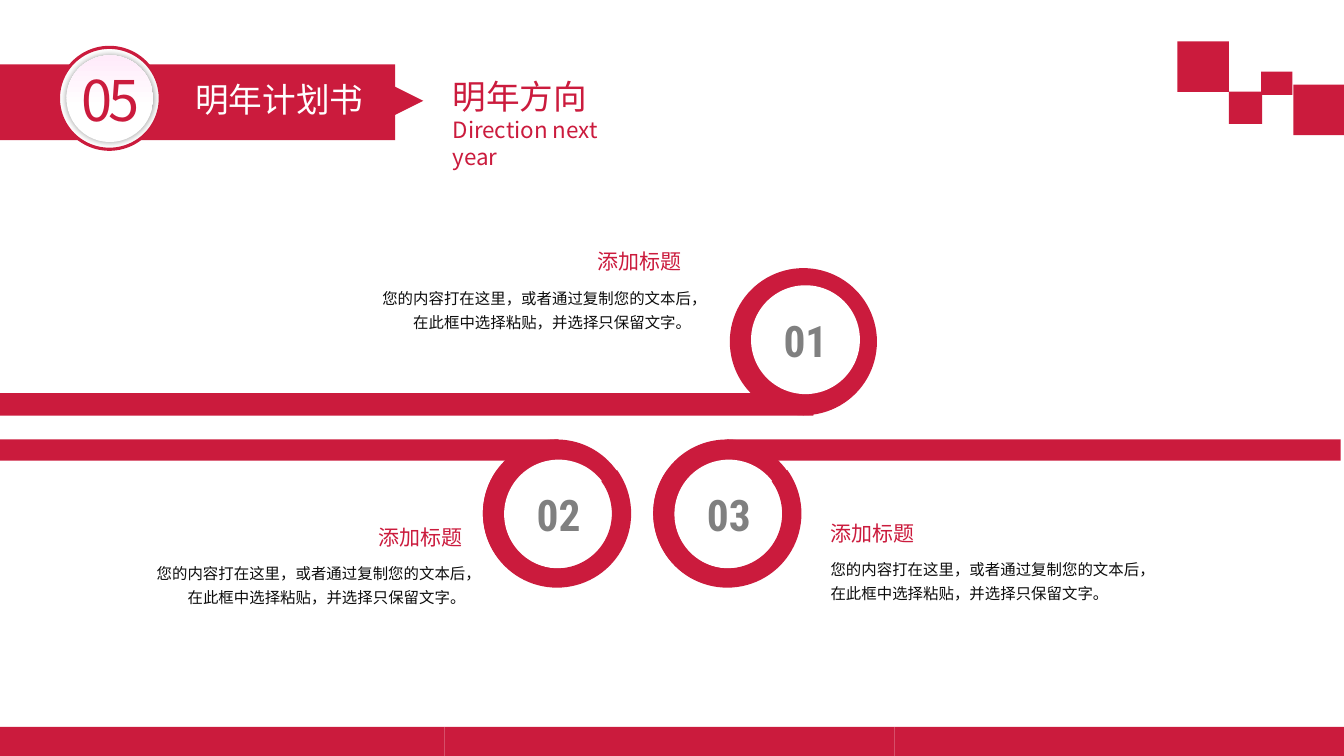
"""Build the slide on next year's direction with three numbered rings."""
from dataclasses import dataclass

from lxml import etree
from pptx import Presentation
from pptx import util as u
from pptx.dml.color import RGBColor
from pptx.enum import shapes, text
from pptx.oxml.ns import qn

SLIDE_WIDTH, SLIDE_HEIGHT = u.Inches(13.33), u.Inches(7.5)
ROWS_PER_COLUMN = 16 / 9
RED, WHITE, GREY, BLACK, PINK = "CB1B3D", "FFFFFF", "808080", "0D0D0D", "FFEBFA"
SANS, CONDENSED = "Noto Sans CJK SC", "Roboto Condensed"
LEFT, CENTER, RIGHT = text.PP_ALIGN.LEFT, text.PP_ALIGN.CENTER, text.PP_ALIGN.RIGHT
RECTANGLE, OVAL = shapes.MSO_SHAPE.RECTANGLE, shapes.MSO_SHAPE.OVAL
HEADING = "添加标题"
BODY = "您的内容打在这里，或者通过复制您的文本后，在此框中选择粘贴，并选择只保留文字。"
RING_SIZE, ARC_SIZE, DISC_SIZE, DISC_INDENT = 10.95, 11.03, 8.1, 1.58


@dataclass(frozen=True)
class Box:
    """A place in hundredths of the slide's width and height."""
    left: float
    top: float
    width: float
    height: float

    def emu(self) -> tuple[int, int, int, int]:
        """Return left, top, width and height in EMU."""
        return (int(SLIDE_WIDTH * self.left / 100), int(SLIDE_HEIGHT * self.top / 100),
                int(SLIDE_WIDTH * self.width / 100), int(SLIDE_HEIGHT * self.height / 100))


@dataclass(frozen=True)
class Style:
    """The look of a paragraph."""
    size: float
    color: str
    font: str = SANS
    bold: bool = False
    align: text.PP_ALIGN = LEFT
    line_spacing: float = 1.0
    tracking: int = 0


@dataclass(frozen=True)
class Step:
    """A numbered ring with its bar and its text."""
    number: str
    bar: Box
    ring_left: float
    ring_top: float
    disc_top: float
    has_arc: bool
    body: Box
    heading_left: float
    align: text.PP_ALIGN


STEPS = (
    Step("02", Box(0, 58.13, 41.55, 2.8), 35.93, 58.13, 60.8, True,
         Box(10.43, 73.33, 24.83, 7.47), 27.53, RIGHT),
    Step("01", Box(0, 52, 60.53, 3), 54.3, 35.47, 37.73, False,
         Box(27.6, 36.93, 24.45, 7.47), 43.88, RIGHT),
    Step("03", Box(54.08, 58.13, 45.68, 2.8), 48.6, 58.13, 60.8, True,
         Box(61.2, 72.8, 24.45, 7.47), 61.2, LEFT),
)
CORNER_SQUARES = (
    Box(96.23, 11.2, 3.77, 6.67),
    Box(87.6, 5.47, 3.83, 6.67),
    Box(91.43, 12.13, 2.48, 4.27),
    Box(93.83, 9.47, 2.33, 3.07),
)
FOOTER_COUNT, FOOTER_WIDTH = 3, 33.46


def rgb(color: str) -> RGBColor:
    """Turn a hex string into a colour."""
    return RGBColor.from_string(color)


def square(left: float, top: float, size: float) -> Box:
    """Return a box with equal sides, its size given in columns."""
    return Box(left, top, size, size * ROWS_PER_COLUMN)


def draw_shape(slide, kind: shapes.MSO_SHAPE, box: Box, color: str = RED):
    """Draw a plain filled shape."""
    shape = slide.shapes.add_shape(kind, *box.emu())
    shape.shadow.inherit = False
    shape.fill.solid()
    shape.fill.fore_color.rgb = rgb(color)
    shape.line.fill.background()
    return shape


def format_paragraph(paragraph, content: str, style: Style) -> None:
    """Fill a paragraph and set its look."""
    paragraph.text = content
    paragraph.alignment = style.align
    paragraph.line_spacing = style.line_spacing
    font = paragraph.font
    font.size, font.bold, font.name = u.Pt(style.size), style.bold, style.font
    font.color.rgb = rgb(style.color)
    properties = paragraph._p.pPr.find(qn("a:defRPr"))
    etree.SubElement(properties, qn("a:ea")).set("typeface", style.font)
    if style.tracking:
        properties.set("spc", str(style.tracking))


def draw_text(slide, box: Box, content: str, style: Style,
              wrap: bool = True, tight: bool = False) -> None:
    """Draw a text box with one paragraph."""
    frame = slide.shapes.add_textbox(*box.emu()).text_frame
    frame.word_wrap = wrap
    if tight:
        frame.margin_left = frame.margin_right = u.Inches(0.08)
        frame.margin_top = frame.margin_bottom = u.Inches(0.04)
    format_paragraph(frame.paragraphs[0], content, style)


def draw_title(slide) -> None:
    """Place and format the title with its English line."""
    title = slide.shapes.title
    title.left, title.top, title.width, title.height = Box(32.93, 9.33, 14.78, 10.27).emu()
    frame = title.text_frame
    frame.word_wrap = True
    frame.auto_size = text.MSO_AUTO_SIZE.NONE
    frame.vertical_anchor = text.MSO_ANCHOR.TOP
    format_paragraph(frame.paragraphs[0], "明年方向", Style(24, RED))
    format_paragraph(frame.add_paragraph(), "Direction next year", Style(16, RED))


def draw_step(slide, step: Step) -> None:
    """Draw a bar, its ring with a number, and the text beside it."""
    draw_shape(slide, RECTANGLE, step.bar)
    draw_shape(slide, OVAL, square(step.ring_left, step.ring_top, RING_SIZE))
    disc = draw_shape(slide, OVAL,
                      square(step.ring_left + DISC_INDENT, step.disc_top, DISC_SIZE), WHITE)
    disc.text_frame.vertical_anchor = text.MSO_ANCHOR.MIDDLE
    format_paragraph(disc.text_frame.paragraphs[0], step.number,
                     Style(31, GREY, CONDENSED, True, CENTER))
    if step.has_arc:
        arc = draw_shape(slide, shapes.MSO_SHAPE.BLOCK_ARC,
                         square(step.ring_left, step.ring_top, ARC_SIZE))
        for index, value in enumerate((194.4, 129.6, 0.13)):
            arc.adjustments[index] = value
    draw_text(slide, step.body, BODY,
              Style(11, BLACK, align=step.align, line_spacing=1.3), tight=True)
    draw_text(slide, Box(step.heading_left, step.body.top - 4.53, 7.5, 4.4), HEADING,
              Style(15, RED), wrap=False, tight=True)


def draw_badge(slide) -> None:
    """Draw the round section number."""
    rim = draw_shape(slide, OVAL, square(4.35, 6.27, 7.58), WHITE)
    rim.line.color.rgb = rgb(RED)
    rim.line.width = u.Pt(2.25)
    face = draw_shape(slide, OVAL, square(4.95, 7.33, 6.45), WHITE)
    face.fill.gradient()
    face.fill.gradient_angle = 90
    for stop, color, position in zip(face.fill.gradient_stops, (WHITE, PINK), (0.4, 1)):
        stop.color.rgb = rgb(color)
        stop.position = position
    effects = face._element.spPr.find(qn("a:effectLst"))
    shadow = etree.SubElement(effects, qn("a:outerShdw"), blurRad=str(u.Pt(5)), dist="0", dir="0")
    shade = etree.SubElement(shadow, qn("a:srgbClr"), val="000000")
    etree.SubElement(shade, qn("a:alpha"), val="40000")
    draw_text(slide, Box(5.33, 8, 7.28, 10.27), "05", Style(40, RED, tracking=-300))


def draw_banner(slide) -> None:
    """Draw the section banner with its pointer, badge and label."""
    draw_shape(slide, RECTANGLE, Box(0, 8.53, 29.4, 10))
    pointer = draw_shape(slide, shapes.MSO_SHAPE.ISOSCELES_TRIANGLE, square(29.4, 11.47, 2.1))
    pointer.rotation = 90
    draw_badge(slide)
    draw_text(slide, Box(13.8, 9.73, 15.6, 6.67), "明年计划书", Style(24, WHITE))


def main() -> None:
    """Build and save the presentation."""
    presentation = Presentation()
    presentation.slide_width, presentation.slide_height = SLIDE_WIDTH, SLIDE_HEIGHT
    slide = presentation.slides.add_slide(presentation.slide_layouts[5])
    draw_title(slide)
    for step in STEPS:
        draw_step(slide, step)
    draw_banner(slide)
    for corner_square in CORNER_SQUARES:
        draw_shape(slide, RECTANGLE, corner_square)
    for index in range(FOOTER_COUNT):
        left = 100 - FOOTER_WIDTH * (FOOTER_COUNT - index)
        draw_shape(slide, RECTANGLE, Box(left, 96.13, FOOTER_WIDTH, 3.87))
    presentation.save("out.pptx")


if __name__ == "__main__":
    main()
